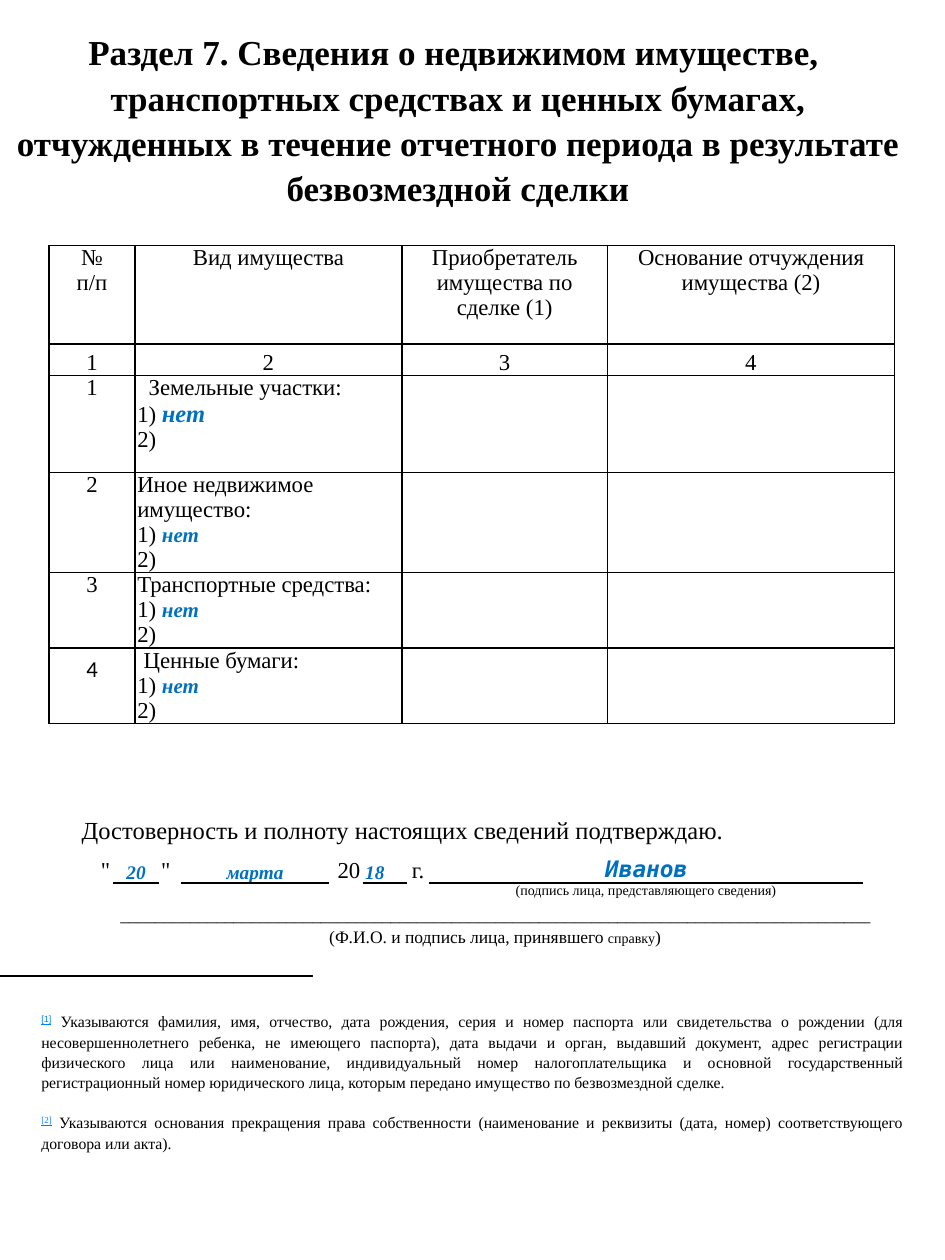
from lxml import etree
from pptx import Presentation
from pptx.dml.color import RGBColor
from pptx.enum import shapes, text
from pptx.oxml.ns import qn
from pptx.util import Inches, Pt

SERIF = "Times New Roman"
BLACK, BLUE, LINK = "000000", "0070C0", "0080FF"
LEFT, CENTER, RIGHT, JUSTIFY = (
    text.PP_ALIGN.LEFT, text.PP_ALIGN.CENTER, text.PP_ALIGN.RIGHT, text.PP_ALIGN.JUSTIFY)
TOP, BOTTOM = text.MSO_ANCHOR.TOP, text.MSO_ANCHOR.BOTTOM
LINE_SPACING = 1.08


def rgb(value):
    return RGBColor.from_string(value)


def plain(words, size=13, font=SERIF, color=BLACK, bold=False, italic=False, mark=False):
    """Describe one run; mark makes it an underlined superscript."""
    return words, size, font, color, bold, italic, mark


def entry(words, size=12, font=SERIF):
    """Describe a filled-in answer: blue bold italic."""
    return plain(words, size, font, BLUE, True, True)


def write(frame, paragraphs, align=LEFT, spacing=None, before=0, indent=0):
    """Fill a text frame with paragraphs, each a list of runs; indent is for the first."""
    for index, runs in enumerate(paragraphs):
        paragraph = frame.add_paragraph() if index else frame.paragraphs[0]
        paragraph.alignment = align
        if spacing:
            paragraph.line_spacing = spacing
        if index and before:
            paragraph.space_before = Pt(before)
        if not index and indent:
            paragraph._p.get_or_add_pPr().set("indent", str(Inches(indent)))
        for words, size, font, color, bold, italic, mark in runs:
            run = paragraph.add_run()
            run.text = words
            run.font.size, run.font.name = Pt(size), font
            run.font.bold, run.font.italic = bold, italic
            run.font.color.rgb = rgb(color)
            if mark:
                run.font.underline = True
                run._r.get_or_add_rPr().set("baseline", "30000")


def add_text(slide, box, paragraphs, **layout):
    frame = slide.shapes.add_textbox(*map(Inches, box)).text_frame
    frame.word_wrap = True
    write(frame, paragraphs, spacing=LINE_SPACING, **layout)


def add_grid(slide, left, top, widths, heights):
    grid = slide.shapes.add_table(
        len(heights), len(widths), Inches(left), Inches(top),
        Inches(sum(widths)), Inches(sum(heights))).table
    grid.first_row = grid.horz_banding = False
    for column, width in zip(grid.columns, widths):
        column.width = Inches(width)
    for row, height in zip(grid.rows, heights):
        row.height = Inches(height)
    return grid


def style_cell(cell, sides, anchor=TOP):
    """Draw black borders on the given sides (letters of LRTB) and none elsewhere."""
    cell.margin_left = cell.margin_right = Inches(0.02)
    cell.margin_top = cell.margin_bottom = 0
    cell.vertical_anchor = anchor
    properties = cell._tc.get_or_add_tcPr()
    for side in "LRTB":
        line = etree.SubElement(properties, qn("a:ln" + side), w=str(Pt(1)))
        if side in sides:
            fill = etree.SubElement(line, qn("a:solidFill"))
            etree.SubElement(fill, qn("a:srgbClr"), val=BLACK)
        else:
            etree.SubElement(line, qn("a:noFill"))
    cell.fill.background()


def add_property_table(slide, left, top):
    headings = [
        ["№", "п/п"], ["Вид имущества"],
        ["Приобретатель", "имущества по сделке (1)"],
        ["Основание отчуждения имущества (2)"],
    ]
    kinds = [  # name, first-line indent, answer size
        ("Земельные участки:", 0.09, 14),
        ("Иное недвижимое имущество:", 0, 12),
        ("Транспортные средства:", 0, 12),
        ("Ценные бумаги:", 0.05, 12),
    ]
    grid = add_grid(slide, left, top, [0.68, 2.12, 1.63, 2.28],
                    [0.78, 0.25, 0.77, 0.79, 0.6, 0.6])
    for r in range(len(grid.rows)):
        for c in range(len(grid.columns)):
            style_cell(grid.cell(r, c), "LRTB", BOTTOM if r == 1 else TOP)
    for c, lines in enumerate(headings):
        write(grid.cell(0, c).text_frame, [[plain(line)] for line in lines], CENTER)
        write(grid.cell(1, c).text_frame, [[plain(str(c + 1))]], CENTER)
    for number, (kind, indent, size) in enumerate(kinds, 1):
        last = number == len(kinds)
        number_cell = grid.cell(number + 1, 0)
        write(number_cell.text_frame,
              [[plain(str(number), font="Calibri" if last else SERIF)]], CENTER)
        if last:
            number_cell.margin_top = Inches(0.06)
        write(grid.cell(number + 1, 1).text_frame,
              [[plain(kind)], [plain("1) "), entry("нет", size)], [plain("2)")]],
              indent=indent)


def add_signature_line(slide, left, top):
    fields = [  # width, run, alignment, underlined
        (0.12, plain('"'), LEFT, False),
        (0.36, entry("20", 11), CENTER, True),
        (0.18, plain('"'), LEFT, False),
        (1.17, entry("марта", 11), CENTER, True),
        (0.27, plain("20"), RIGHT, False),
        (0.35, entry("18", 11), LEFT, True),
        (0.18, plain("г."), CENTER, False),
        (3.44, entry("Иванов", 13, "DejaVu Sans Mono"), CENTER, True),
    ]
    grid = add_grid(slide, left, top, [field[0] for field in fields], [0.21, 0.21])
    for c, (_, run, align, underlined) in enumerate(fields):
        style_cell(grid.cell(0, c), "B" if underlined else "", BOTTOM)
        style_cell(grid.cell(1, c), "T" if underlined else "")
        write(grid.cell(0, c).text_frame, [[run]], align)
    write(grid.cell(1, len(fields) - 1).text_frame,
          [[plain("(подпись лица, представляющего сведения)", 8)]], CENTER)


def add_title(slide, box):
    lines = [
        "Раздел 7. Сведения о недвижимом имуществе, ",
        "транспортных средствах и ценных бумагах, отчужденных в течение "
        "отчетного периода в результате безвозмездной сделки",
    ]
    add_text(slide, box, [[plain(line, 20, bold=True)] for line in lines], align=CENTER)


def add_recipient(slide, box):
    add_text(slide, box, [[
        plain("_" * 86 + " (Ф.И.О. и подпись лица, принявшего ", 10),
        plain("справку", 8), plain(")", 10)]], align=CENTER)


def add_footnotes(slide, left, top, width):
    rule = slide.shapes.add_shape(shapes.MSO_SHAPE.RECTANGLE, 0, Inches(top),
                                  Inches(2.48), Inches(0.01))
    rule.shadow.inherit = False
    rule.fill.solid()
    rule.fill.fore_color.rgb = rule.line.color.rgb = rgb(BLACK)
    rule.line.width = Pt(0.75)
    notes = [
        ("[1]", "Arial",
         " Указываются фамилия, имя, отчество, дата рождения, серия и номер паспорта "
         "или свидетельства о рождении (для несовершеннолетнего ребенка, не имеющего "
         "паспорта), дата выдачи и орган, выдавший документ, адрес регистрации "
         "физического лица или наименование, индивидуальный номер налогоплательщика и "
         "основной государственный регистрационный номер юридического лица, которым "
         "передано имущество по безвозмездной сделке."),
        ("[2]", SERIF,
         " Указываются основания прекращения права собственности (наименование и "
         "реквизиты (дата, номер) соответствующего договора или акта)."),
    ]
    add_text(slide, (left, top + 0.23, width, 1.2),
             [[plain(mark, 9, font, LINK, mark=True), plain(note, 9)]
              for mark, font, note in notes],
             align=JUSTIFY, before=11)


def main():
    deck = Presentation()
    deck.slide_width, deck.slide_height = Inches(7.5), Inches(10)
    slide = deck.slides.add_slide(deck.slide_layouts[6])
    add_property_table(slide, 0.39, 1.95)
    add_signature_line(slide, 0.78, 6.8)
    add_title(slide, (0, 0.17, 7.27, 1.45))
    add_footnotes(slide, 0.23, 7.74, 7.03)
    add_text(slide, (0.55, 6.4, 6.14, 0.35),
             [[plain("Достоверность и полноту настоящих сведений подтверждаю.", 14)]])
    add_recipient(slide, (0.78, 7.11, 6.3, 0.44))
    deck.save("out.pptx")


if __name__ == "__main__":
    main()
